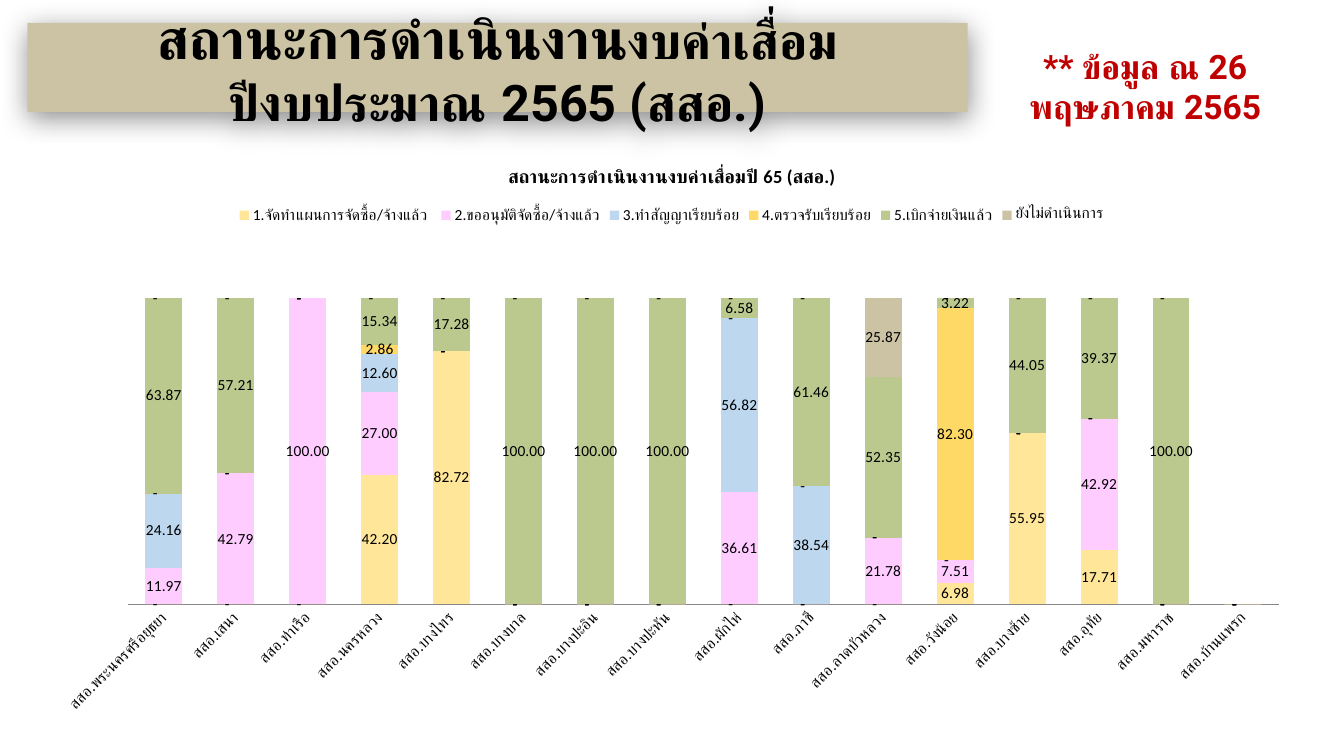
import pptx
import pptx.chart.data
import pptx.dml.color
import pptx.enum.chart
import pptx.enum.shapes
import pptx.enum.text
import pptx.oxml
import pptx.oxml.ns
import pptx.util
from pptx.util import Cm

COLORS = {
    "black": "000000",
    "white": "FFFFFF",
    "red": "C00000",
    "tan": "CCC3A4",
    "axis": "868686",
    "yellow": "FFE699",
    "pink": "FFCCFF",
    "blue": "BDD7EE",
    "gold": "FFD966",
    "green": "BBC98F",
}
NUMBER_FORMAT = '_(* #,##0.00_);_(* \\(#,##0.00\\);_(* "-"??_);_(@_)'

DISTRICTS = [
    "พระนครศรีอยุธยา", "เสนา", "ท่าเรือ", "นครหลวง", "บางไทร", "บางบาล",
    "บางปะอิน", "บางปะหัน", "ผักไห่", "ภาชี", "ลาดบัวหลวง", "วังน้อย",
    "บางซ้าย", "อุทัย", "มหาราช", "บ้านแพรก",
]
# Name, colour and percentage per district
STAGES = [
    ("1.จัดทำแผนการจัดซื้อ/จ้างแล้ว ", "yellow",
     [0, 0, 0, 42.2, 82.72, 0, 0, 0, 0, 0, 0, 6.98, 55.95, 17.71, 0, 0]),
    ("2.ขออนุมัติจัดซื้อ/จ้างแล้ว", "pink",
     [11.97, 42.79, 100, 27, 0, 0, 0, 0, 36.61, 0, 21.78, 7.51, 0, 42.92, 0, 0]),
    ("3.ทำสัญญาเรียบร้อย", "blue",
     [24.16, 0, 0, 12.6, 0, 0, 0, 0, 56.82, 38.54, 0, 0, 0, 0, 0, 0]),
    ("4.ตรวจรับเรียบร้อย", "gold",
     [0, 0, 0, 2.86, 0, 0, 0, 0, 0, 0, 0, 82.3, 0, 0, 0, 0]),
    ("5.เบิกจ่ายเงินแล้ว", "green",
     [63.87, 57.21, 0, 15.34, 17.28, 100, 100, 100, 6.58, 61.46, 52.35, 3.22,
      44.05, 39.37, 100, 0]),
    ("ยังไม่ดำเนินการ", "tan",
     [0, 0, 0, 0, 0, 0, 0, 0, 0, 0, 25.87, 0, 0, 0, 0, 0]),
]


def rgb(name):
    return pptx.dml.color.RGBColor.from_string(COLORS[name])


def style_font(font, size, color="black", bold=False, name="Calibri"):
    font.name = name
    font.size = pptx.util.Pt(size)
    font.bold = bold
    font.color.rgb = rgb(color)


def add_box(slide, left, top, width, height, fill, runs, color, anchor):
    """Add a filled rectangle with one centred line of (text, size) runs."""
    shape = slide.shapes.add_shape(
        pptx.enum.shapes.MSO_SHAPE.RECTANGLE,
        Cm(left), Cm(top), Cm(width), Cm(height))
    shape.shadow.inherit = False
    shape.fill.solid()
    shape.fill.fore_color.rgb = rgb(fill)
    shape.line.fill.background()
    frame = shape.text_frame
    frame.word_wrap = True
    frame.vertical_anchor = anchor
    paragraph = frame.paragraphs[0]
    paragraph.alignment = pptx.enum.text.PP_ALIGN.CENTER
    for text, size in runs:
        run = paragraph.add_run()
        run.text = text
        style_font(run.font, size, color, True, "Roboto")
    return shape


def add_soft_shadow(shape):
    effects = shape._element.spPr.find(pptx.oxml.ns.qn("a:effectLst"))
    effects.append(pptx.oxml.parse_xml(
        f'<a:outerShdw {pptx.oxml.ns.nsdecls("a")} blurRad="254000" dist="50800" '
        f'dir="5400000" algn="t" rotWithShape="0"><a:srgbClr val="{COLORS["black"]}">'
        '<a:alpha val="43000"/></a:srgbClr></a:outerShdw>'))


def set_plot_layout(chart, x, y, width, height):
    """Fix the inner plot area, in fractions of the chart."""
    plot_area = chart._chartSpace.chart.plotArea
    for layout in plot_area.findall(pptx.oxml.ns.qn("c:layout")):
        plot_area.remove(layout)
    plot_area.insert(0, pptx.oxml.parse_xml(
        f'<c:layout {pptx.oxml.ns.nsdecls("c")}><c:manualLayout>'
        '<c:layoutTarget val="inner"/><c:xMode val="edge"/><c:yMode val="edge"/>'
        f'<c:x val="{x}"/><c:y val="{y}"/><c:w val="{width}"/><c:h val="{height}"/>'
        '</c:manualLayout></c:layout>'))


def style_axes(chart):
    value_axis = chart.value_axis
    value_axis.minimum_scale = 0
    value_axis.maximum_scale = 120
    value_axis.has_major_gridlines = False
    value_axis.visible = False
    category_axis = chart.category_axis
    category_axis.major_tick_mark = pptx.enum.chart.XL_TICK_MARK.NONE
    category_axis.format.line.color.rgb = rgb("axis")
    style_font(category_axis.tick_labels.font, 11)
    body = category_axis._element.txPr.find(pptx.oxml.ns.qn("a:bodyPr"))
    body.set("rot", "-2700000")
    body.set("vert", "horz")


def add_status_chart(slide, left, top, width, height):
    data = pptx.chart.data.CategoryChartData(number_format=NUMBER_FORMAT)
    data.categories = [f"สสอ.{district}" for district in DISTRICTS]
    for name, _, values in STAGES:
        data.add_series(name, values)
    chart = slide.shapes.add_chart(
        pptx.enum.chart.XL_CHART_TYPE.COLUMN_STACKED,
        Cm(left), Cm(top), Cm(width), Cm(height), data).chart
    style_font(chart.font, 11)

    # Title and legend
    chart.has_title = True
    title = chart.chart_title.text_frame.paragraphs[0]
    title.text = "สถานะการดำเนินงานงบค่าเสื่อมปี 65 (สสอ.)"
    style_font(title.font, 13.2, bold=True)
    chart.has_legend = True
    chart.legend.position = pptx.enum.chart.XL_LEGEND_POSITION.TOP
    chart.legend.include_in_layout = False
    style_font(chart.legend.font, 11)

    # Columns and their labels
    plot = chart.plots[0]
    plot.gap_width = 95
    plot.overlap = 100
    plot.vary_by_categories = False
    for series, (_, color, _) in zip(plot.series, STAGES):
        series.format.fill.solid()
        series.format.fill.fore_color.rgb = rgb(color)
        labels = series.data_labels
        labels.show_value = True
        labels.number_format = NUMBER_FORMAT
        labels.number_format_is_linked = False
        style_font(labels.font, 11)

    style_axes(chart)
    set_plot_layout(chart, 0.07, 0.16, 0.91, 0.63)


def main():
    presentation = pptx.Presentation()
    presentation.slide_width = Cm(33.87)
    presentation.slide_height = Cm(19.05)
    slide = presentation.slides.add_slide(presentation.slide_layouts[6])

    add_status_chart(slide, 0.99, 3.61, 31.88, 14.71)

    # Data date
    add_box(slide, 24.54, 1.02, 8.64, 1.37, "white",
            [("** ข้อมูล ณ 26 พฤษภาคม 2565", 24)], "red",
            pptx.enum.text.MSO_ANCHOR.TOP)

    # Heading banner
    banner = add_box(slide, 0.69, 0.58, 23.7, 2.24, "tan",
                     [("สถานะการดำเนินงาน", 40),
                      ("งบค่าเสื่อม ปีงบประมาณ 2565 (สสอ.)", 36)],
                     "black", pptx.enum.text.MSO_ANCHOR.MIDDLE)
    add_soft_shadow(banner)

    presentation.save("out.pptx")


if __name__ == "__main__":
    main()
